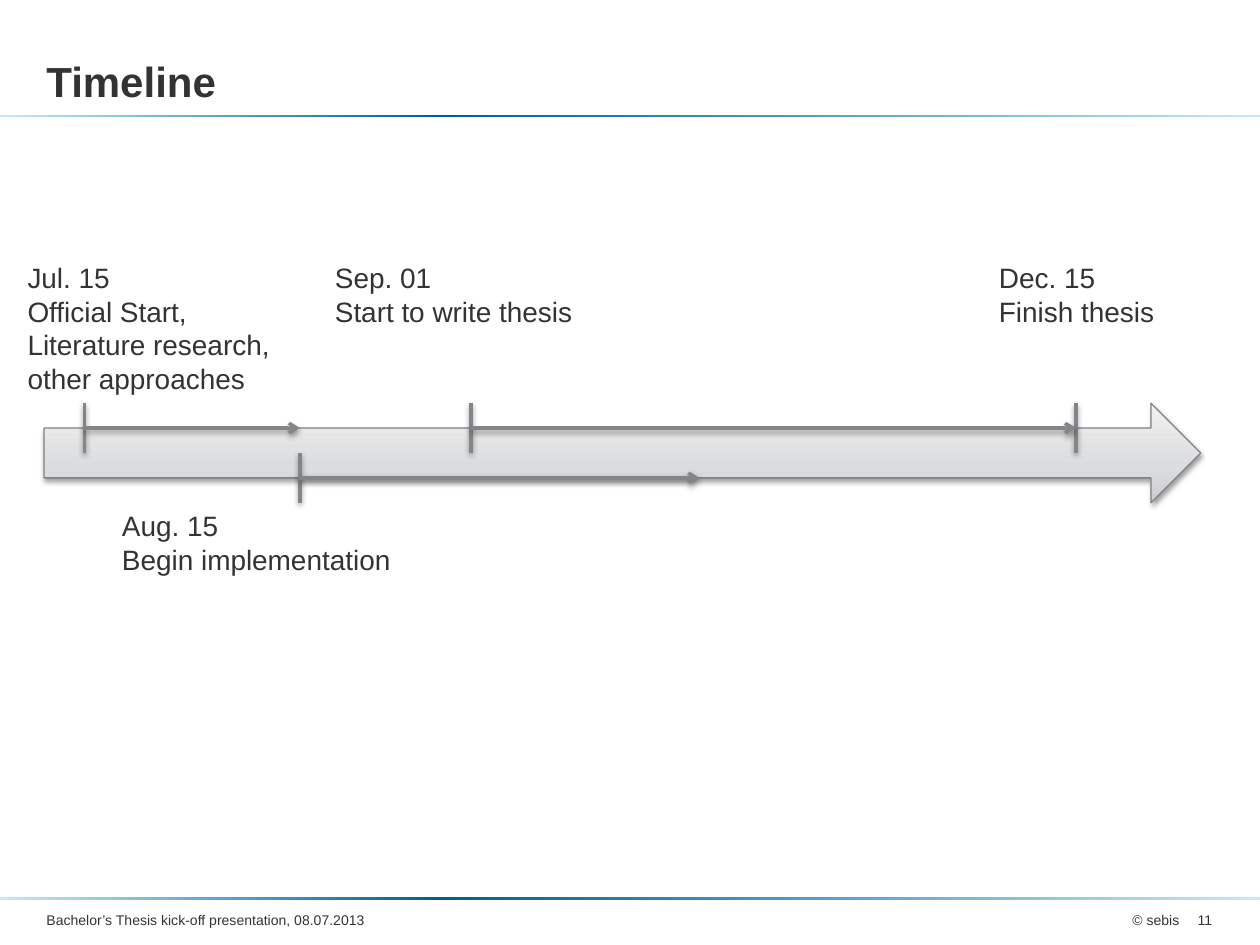
from copy import deepcopy

from lxml import etree
from pptx import Presentation
from pptx import util as u
from pptx.dml.color import RGBColor
from pptx.enum import shapes, text
from pptx.oxml import parse_xml
from pptx.oxml.ns import nsdecls, qn

WIDTH, HEIGHT = 10, 7.5
INK, GREY = "333333", "848588"
ARROW_LEFT, ARROW_TOP = 0.35, 3.2
ROW = 0.79 / 4  # the block arrow is four rows high
LABEL_TOP = 2.02

presentation = Presentation()
presentation.slide_width = u.Inches(WIDTH)
presentation.slide_height = u.Inches(HEIGHT)
slide = presentation.slides.add_slide(presentation.slide_layouts[6])


def color(value):
    return RGBColor.from_string(value)


def add_shadow(shape):
    properties = shape._element.spPr
    for effects in properties.findall(qn("a:effectLst")):
        properties.remove(effects)
    properties.append(parse_xml(
        f'<a:effectLst {nsdecls("a")}>'
        '<a:outerShdw blurRad="40000" dist="20000" dir="5400000" rotWithShape="0">'
        '<a:srgbClr val="000000"><a:alpha val="38000"/></a:srgbClr>'
        '</a:outerShdw></a:effectLst>'))


# Two header and footer rules, then the block arrow, all with three-stop gradients
RULE_COLORS = ("C0E9FF", "005E92", "C0E9FF")
ARROW_COLORS = ("CDCDD0", "DBDCDD", "F1F1F2")
for kind, left, top, width, height, stops, angle in (
    (shapes.MSO_SHAPE.RECTANGLE, 0, 0.91, WIDTH, 0.02, RULE_COLORS, 0),
    (shapes.MSO_SHAPE.RECTANGLE, 0, 7.12, WIDTH, 0.02, RULE_COLORS, 0),
    (shapes.MSO_SHAPE.RIGHT_ARROW, ARROW_LEFT, ARROW_TOP, 9.18, 4 * ROW, ARROW_COLORS, 90),
):
    shape = slide.shapes.add_shape(kind, *map(u.Inches, (left, top, width, height)))
    shape.shadow.inherit = False
    shape.fill.gradient()
    shape.fill.gradient_angle = angle
    stop_list = shape._element.spPr.find(".//" + qn("a:gsLst"))
    stop_list.append(deepcopy(stop_list[-1]))
    for stop, position, value in zip(shape.fill.gradient_stops, (0, 0.35, 1), stops):
        stop.position = position
        stop.color.rgb = color(value)
    if kind == shapes.MSO_SHAPE.RIGHT_ARROW:
        shape.line.color.rgb = color("818285")
        shape.line.width = u.Pt(0.75)
        add_shadow(shape)
    else:
        shape.line.fill.background()

# Title, footer and milestone labels: each paragraph is a list of lines
LEFT, RIGHT = text.PP_ALIGN.LEFT, text.PP_ALIGN.RIGHT
TOP, MIDDLE, BOTTOM = text.MSO_ANCHOR.TOP, text.MSO_ANCHOR.MIDDLE, text.MSO_ANCHOR.BOTTOM
for box, size, anchor, align, wrap, paragraphs in (
    ((0.27, 0.05, 8.24, 0.79), 24, BOTTOM, LEFT, True, [["Timeline"]]),
    ((7.7, 7.14, 1.76, 0.32), 8, MIDDLE, RIGHT, False, [["© sebis"]]),
    ((0.27, 7.14, 5.12, 0.32), 8, MIDDLE, LEFT, True,
     [["Bachelor’s Thesis kick-off presentation, 08.07.2013"]]),
    ((9.45, 7.14, 0.27, 0.32), 8, MIDDLE, RIGHT, False, [["11"]]),
    ((0.12, LABEL_TOP, 2.15, 1.18), 16, TOP, LEFT, False,
     [["Jul. 15", "Official Start,", "Literature research,"], ["other approaches"]]),
    ((0.87, ARROW_TOP + 4 * ROW, 2.36, 0.64), 16, TOP, LEFT, False,
     [["Aug. 15", "Begin implementation"]]),
    ((2.56, LABEL_TOP, 2.11, 0.64), 16, TOP, LEFT, False,
     [["Sep. 01", "Start to write thesis"]]),
    ((7.83, LABEL_TOP, 1.45, 0.64), 16, TOP, LEFT, False,
     [["Dec. 15", "Finish thesis"]]),
):
    frame = slide.shapes.add_textbox(*map(u.Inches, box)).text_frame
    frame.word_wrap = wrap
    frame.vertical_anchor = anchor
    if anchor == BOTTOM:
        frame.margin_top = frame.margin_bottom = 0
    if align == RIGHT:
        frame.margin_left = 0  # leaves the page number room on one line
    for index, lines in enumerate(paragraphs):
        paragraph = frame.add_paragraph() if index else frame.paragraphs[0]
        paragraph.alignment = align
        for number, line in enumerate(lines):
            if number:
                paragraph.add_line_break()
            run = paragraph.add_run()
            run.text = line
            run.font.name = "Arial"
            run.font.size = u.Pt(size)
            run.font.bold = anchor == BOTTOM
            run.font.color.rgb = color(INK)

# Milestone ticks and phase arrows: start and end x, start and end row, arrowhead
JULY, AUGUST, SEPTEMBER, DECEMBER = 0.67, 2.38, 3.74, 8.54
for start, end, first_row, last_row, arrowhead in (
    (JULY, JULY, 0, 2, False),
    (AUGUST, AUGUST, 2, 4, False),
    (SEPTEMBER, SEPTEMBER, 0, 2, False),
    (DECEMBER, DECEMBER, 0, 2, False),
    (JULY, AUGUST, 1, 1, True),
    (AUGUST, 5.55, 3, 3, True),
    (SEPTEMBER, DECEMBER, 1, 1, True),
):
    connector = slide.shapes.add_connector(
        shapes.MSO_CONNECTOR.STRAIGHT,
        u.Inches(start), u.Inches(ARROW_TOP + first_row * ROW),
        u.Inches(end), u.Inches(ARROW_TOP + last_row * ROW))
    connector.line.color.rgb = color(GREY)
    connector.line.width = u.Pt(2)
    if arrowhead:
        etree.SubElement(connector.line._get_or_add_ln(), qn("a:tailEnd"), type="arrow")
    add_shadow(connector)

presentation.save("out.pptx")
